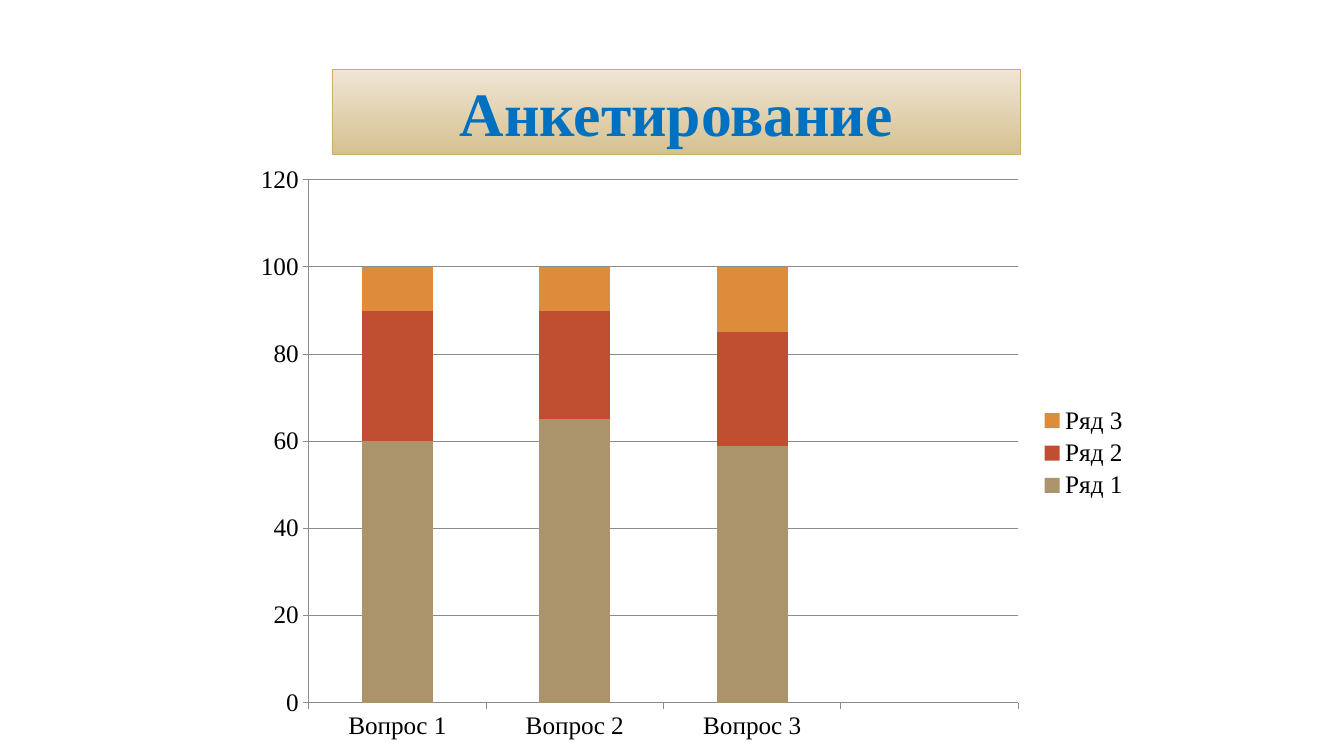
from lxml.etree import SubElement
from pptx import Presentation
from pptx.chart.data import CategoryChartData
from pptx.dml.color import RGBColor
from pptx.enum.chart import XL_CHART_TYPE, XL_LEGEND_POSITION, XL_TICK_MARK
from pptx.enum.shapes import MSO_SHAPE
from pptx.enum.text import MSO_ANCHOR, PP_ALIGN
from pptx.oxml import parse_xml
from pptx.oxml.ns import nsdecls, qn
from pptx.util import Inches, Pt

TITLE = "Анкетирование"
TITLE_BOX = (3.3, 0.69, 6.82, 0.84)
CHART_BOX = (2.41, 1.53, 8.89, 5.93)
QUESTIONS = ["Вопрос 1", "Вопрос 2", "Вопрос 3", ""]
ANSWERS = {
    "Ряд 1": (60, 65, 59, None),
    "Ряд 2": (30, 25, 26, None),
    "Ряд 3": (10, 10, 15, None),
}
THEME = {
    "font": "Times New Roman",
    "title_size": 44,
    "chart_size": 18,
    "title": "0070C0",
    "title_outline": "C04F32",
    "title_fill": ("EEE5D4", "D6C191"),
    "title_border": "CBAF62",
    "text": "000000",
    "grid": "8B8B8B",
    "series": ("AB946B", "C04F32", "DD8C3C"),
}


def rgb(value):
    return RGBColor.from_string(value)


def set_font(font, size, color, bold=False):
    font.name = THEME["font"]
    font.size = Pt(size)
    font.color.rgb = rgb(color)
    font.bold = bold


def set_line(line):
    line.color.rgb = rgb(THEME["grid"])
    line.width = Pt(0.75)


def add_title(slide):
    sp = slide.shapes.add_shape(MSO_SHAPE.RECTANGLE, *map(Inches, TITLE_BOX))
    sp.shadow.inherit = False
    sp.fill.gradient()
    sp.fill.gradient_angle = 270
    for stop, position, color in zip(sp.fill.gradient_stops, (0, 1), THEME["title_fill"]):
        stop.position = position
        stop.color.rgb = rgb(color)
    sp.line.color.rgb = rgb(THEME["title_border"])
    sp.line.width = Pt(0.75)
    tf = sp.text_frame
    tf.word_wrap = True
    tf.vertical_anchor = MSO_ANCHOR.MIDDLE
    tf.text = TITLE
    p = tf.paragraphs[0]
    p.alignment = PP_ALIGN.CENTER
    r = p.runs[0]
    set_font(r.font, THEME["title_size"], THEME["title"], True)
    outline = parse_xml(f'<a:ln {nsdecls("a")} w="{Pt(1.75)}"/>')
    fill = SubElement(outline, qn("a:solidFill"))
    SubElement(fill, qn("a:srgbClr"), val=THEME["title_outline"])
    r.font._element.insert(0, outline)


def add_answers(slide):
    data = CategoryChartData()
    data.categories = QUESTIONS
    for name, values in ANSWERS.items():
        data.add_series(name, values)
    frame = slide.shapes.add_chart(
        XL_CHART_TYPE.COLUMN_STACKED, *map(Inches, CHART_BOX), data
    )
    chart = frame.chart
    chart.has_title = False
    set_font(chart.font, THEME["chart_size"], THEME["text"])
    chart.has_legend = True
    chart.legend.position = XL_LEGEND_POSITION.RIGHT
    chart.legend.include_in_layout = False
    for axis in (chart.category_axis, chart.value_axis):
        axis.major_tick_mark = XL_TICK_MARK.OUTSIDE
        axis.minor_tick_mark = XL_TICK_MARK.NONE
        set_line(axis.format.line)
    chart.value_axis.minimum_scale = 0
    chart.value_axis.maximum_scale = 120
    chart.value_axis.major_unit = 20
    chart.value_axis.has_major_gridlines = True
    set_line(chart.value_axis.major_gridlines.format.line)
    plot = chart.plots[0]
    plot.vary_by_categories = False
    plot.gap_width = 150
    plot.overlap = 100
    for series, color in zip(plot.series, THEME["series"]):
        series.format.fill.solid()
        series.format.fill.fore_color.rgb = rgb(color)


def main():
    prs = Presentation()
    prs.slide_width, prs.slide_height = Inches(13.33), Inches(7.5)
    slide = prs.slides.add_slide(prs.slide_layouts[6])
    add_title(slide)
    add_answers(slide)
    prs.save("out.pptx")


if __name__ == "__main__":
    main()
